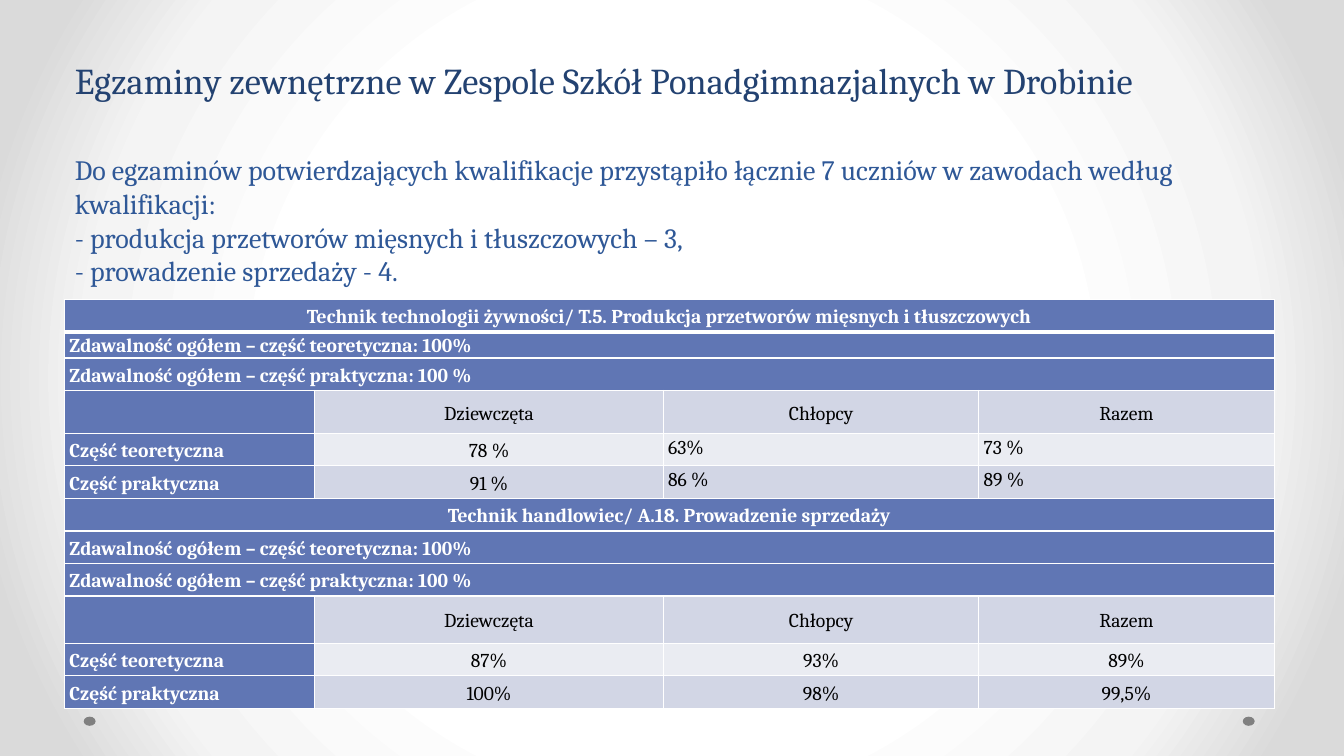
from pptx import Presentation
from pptx.dml.color import RGBColor
from pptx.enum.shapes import MSO_SHAPE as Shape
from pptx.enum.text import MSO_ANCHOR as Anchor, MSO_AUTO_SIZE as AutoSize, PP_ALIGN as Align
from pptx.oxml import parse_xml
from pptx.oxml.ns import nsdecls, qn
from pptx.util import Cm, Pt

HEADING = "Egzaminy zewnętrzne w Zespole Szkół Ponadgimnazjalnych w Drobinie"
SUMMARY = [
    "Do egzaminów potwierdzających kwalifikacje przystąpiło łącznie 7 uczniów w zawodach według kwalifikacji:",
    "- produkcja przetworów mięsnych i tłuszczowych – 3,",
    "- prowadzenie sprzedaży - 4.",
]
PASS_RATES = [
    "Zdawalność ogółem – część teoretyczna: 100%",
    "Zdawalność ogółem – część praktyczna: 100 %",
]
GROUPS = ["Dziewczęta", "Chłopcy", "Razem"]
EXAMS = [
    ("Technik technologii żywności/ T.5. Produkcja przetworów mięsnych i tłuszczowych",
     ["78 %", "63%", "73 %"], ["91 %", "86 %", "89 %"]),
    ("Technik handlowiec/ A.18. Prowadzenie sprzedaży",
     ["87%", "93%", "89%"], ["100%", "98%", "99,5%"]),
]
TOP_LEFT_CELLS = {(row, column) for row in (4, 5) for column in (2, 3)}
COLUMN_WIDTHS = [6.3, 8.79, 7.95, 7.44]
ROW_HEIGHTS = [0.82, 0.66, 0.82, 1.08, 0.82, 0.82, 0.82, 0.82, 0.82, 1.19, 0.82, 0.82]


def color(value):
    return RGBColor.from_string(value)


class SlideBuilder:
    font = "Cambria"
    header_fill = "6076B4"
    band_fills = ["D2D6E5", "EAECF2"]

    def __init__(self, page):
        self.page = page

    def background(self, stops):
        self.page.background.fill.solid()
        holder = self.page.element.find(".//" + qn("p:bgPr"))
        stop_xml = "".join(
            f'<a:gs pos="{position * 1000}"><a:srgbClr val="{shade}"/></a:gs>'
            for position, shade in stops)
        gradient = parse_xml(
            f'<a:gradFill {nsdecls("a")} rotWithShape="1"><a:gsLst>{stop_xml}</a:gsLst>'
            '<a:path path="circle"><a:fillToRect l="50000" t="50000" r="50000" b="50000"/>'
            '</a:path></a:gradFill>')
        holder.replace(holder.find(qn("a:solidFill")), gradient)

    def dot(self, left, top):
        dot = self.page.shapes.add_shape(Shape.OVAL, Cm(left), Cm(top), Cm(0.3), Cm(0.23))
        dot.shadow.inherit = False
        dot.fill.solid()
        dot.fill.fore_color.rgb = color("808080")
        dot.line.fill.background()

    def style(self, para, size, shade, bold=False):
        for span in para.runs:
            span.font.name = self.font
            span.font.size = Pt(size)
            span.font.bold = bold
            span.font.color.rgb = color(shade)

    def placeholder(self, index, lines, top, height, size, shade, spacing):
        box = self.page.placeholders[index]
        box.left, box.top, box.width, box.height = Cm(1.63), Cm(top), Cm(30.48), Cm(height)
        frame = box.text_frame
        frame.text = "\n".join(lines)
        frame.word_wrap = True
        frame.auto_size = AutoSize.NONE
        frame.vertical_anchor = Anchor.TOP
        frame.margin_top = frame.margin_bottom = 0
        for para in frame.paragraphs:
            para.alignment = Align.LEFT
            para.line_spacing = spacing
            para.space_before = para.space_after = Pt(0)
            properties = para._p.get_or_add_pPr()
            properties.set("marL", "0")
            properties.set("indent", "0")
            properties.append(parse_xml(f'<a:buNone {nsdecls("a")}/>'))
            self.style(para, size, shade)

    def table(self, left, top, widths, heights):
        frame = self.page.shapes.add_table(
            len(heights), len(widths), Cm(left), Cm(top), Cm(sum(widths)), Cm(sum(heights)))
        table = frame.table
        table.first_row = table.horz_banding = False
        for column, width in zip(table.columns, widths):
            column.width = Cm(width)
        for row, height in zip(table.rows, heights):
            row.height = Cm(height)
        return table

    def borders(self, cell, top=1, bottom=1):
        properties = cell._tc.get_or_add_tcPr()
        for side, width in (("L", 1), ("R", 1), ("T", top), ("B", bottom)):
            properties.append(parse_xml(
                f'<a:ln{side} {nsdecls("a")} w="{Pt(width)}"><a:solidFill>'
                f'<a:srgbClr val="FFFFFF"/></a:solidFill></a:ln{side}>'))

    def cell(self, table, row, column, text, fill, header, centered, raised=False):
        cell = table.cell(row, column)
        self.borders(cell, 3 if row == 1 else 1, 3 if row == 0 else 1)
        cell.fill.solid()
        cell.fill.fore_color.rgb = color(fill)
        cell.margin_left = cell.margin_right = Cm(0.12)
        cell.margin_top = cell.margin_bottom = 0
        cell.vertical_anchor = Anchor.TOP if raised else Anchor.MIDDLE
        cell.text_frame.text = text
        para = cell.text_frame.paragraphs[0]
        para.alignment = Align.CENTER if centered else Align.LEFT
        para.line_spacing = 1.15
        if raised:
            para.space_after = Pt(10)
        self.style(para, 14, "FFFFFF" if header else "000000", header)

    def wide_row(self, table, row, text, centered):
        last = len(table.columns) - 1
        for column in range(last + 1):
            self.cell(table, row, column, "" if column else text, self.header_fill, True, centered)
        table.cell(row, 0).merge(table.cell(row, last))

    def data_row(self, table, row, label, values, band):
        self.cell(table, row, 0, label, self.header_fill, True, False)
        for column, value in enumerate(values, 1):
            raised = (row, column) in TOP_LEFT_CELLS
            self.cell(table, row, column, value, self.band_fills[band], False, not raised, raised)


def main():
    deck = Presentation()
    deck.slide_width, deck.slide_height = Cm(33.87), Cm(19.05)
    builder = SlideBuilder(deck.slides.add_slide(deck.slide_layouts[1]))
    builder.background([(50, "FFFFFF"), (76, "F4F4F4"), (92, "DADADA")])
    for left in (31.32, 2.11):
        builder.dot(left, 18.06)
    builder.placeholder(0, [HEADING], 1.46, 1.25, 26, "234271", 1.0)
    builder.placeholder(1, SUMMARY, 3.85, 3.4, 20, "2F5897", Pt(24))

    table = builder.table(1.63, 7.54, COLUMN_WIDTHS, ROW_HEIGHTS)
    for index, (qualification, theory, practice) in enumerate(EXAMS):
        start = index * 6
        for offset, text in enumerate([qualification] + PASS_RATES):
            builder.wide_row(table, start + offset, text, offset == 0)
        builder.data_row(table, start + 3, "", GROUPS, 0)
        builder.data_row(table, start + 4, "Część teoretyczna", theory, 1)
        builder.data_row(table, start + 5, "Część praktyczna", practice, 0)
    deck.save("out.pptx")


if __name__ == "__main__":
    main()
